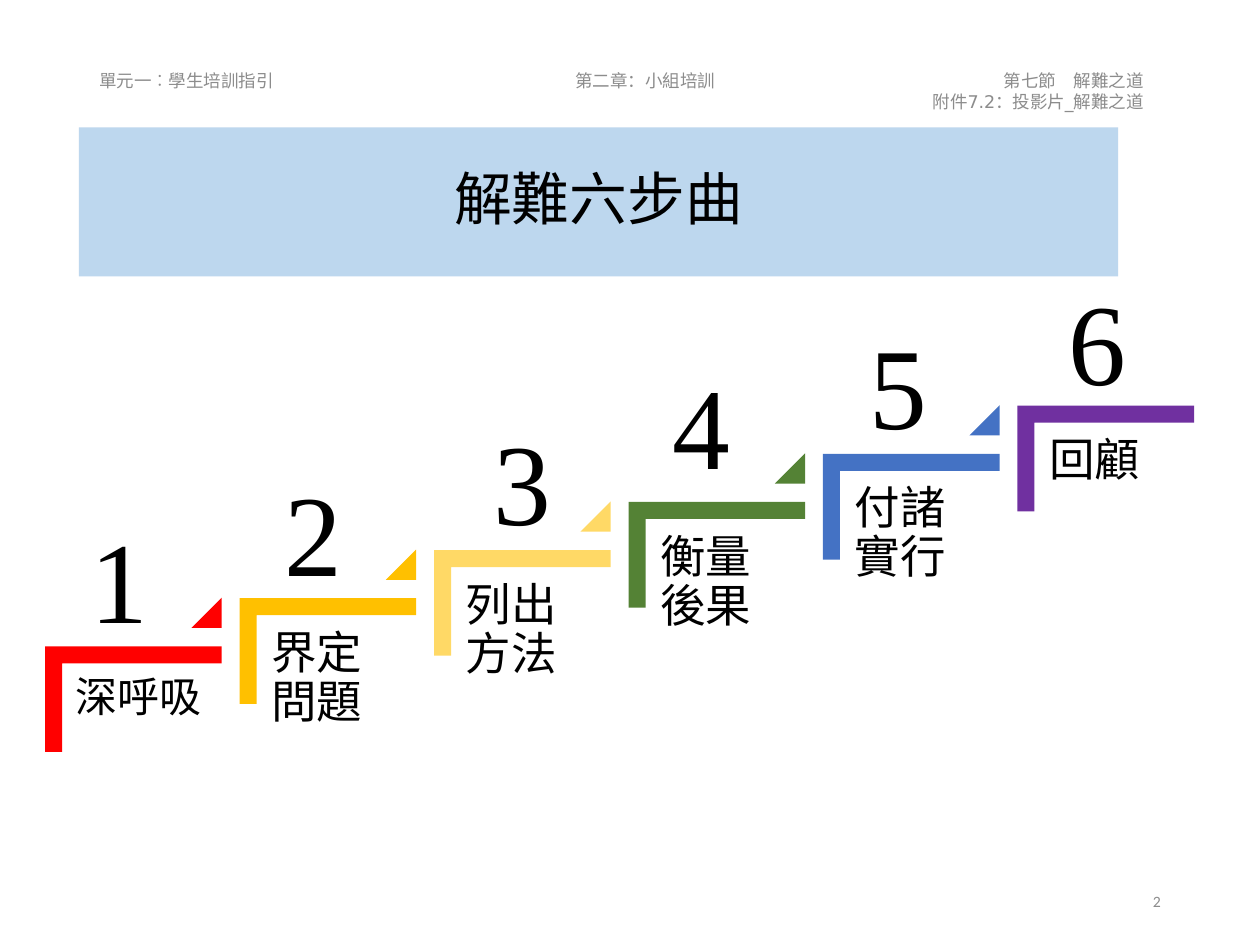
from pptx import Presentation
from pptx.dml.color import RGBColor
from pptx.enum.shapes import MSO_SHAPE
from pptx.enum.text import MSO_ANCHOR, PP_ALIGN
from pptx.util import Cm, Pt

GREY, BLACK = "8C8C8C", "000000"

# label, label size, colour, number offset from the step's corner (cm)
STEPS = [
    ("深呼吸", 24, "FF0000", (0.66, -2.92)),
    ("界定問題", 26, "FFC000", (0.66, -2.90)),
    ("列出方法", 26, "FFD966", (0.94, -2.95)),
    ("衡量後果", 26, "548235", (0.64, -3.10)),
    ("付諸實行", 26, "4472C4", (0.69, -2.95)),
    ("回顧", 26, "7030A0", (0.79, -2.87)),
]


def colour(value):
    return RGBColor.from_string(value)


def place(shape, left, top, width, height):
    shape.left, shape.top = Cm(left), Cm(top)
    shape.width, shape.height = Cm(width), Cm(height)


def write(frame, lines, size, font, ink, align=PP_ALIGN.LEFT, spacing=None):
    frame.word_wrap = True
    for index, line in enumerate(lines):
        para = frame.add_paragraph() if index else frame.paragraphs[0]
        para.alignment = align
        para.line_spacing = spacing
        span = para.add_run()
        span.text = line
        span.font.size = Pt(size)
        span.font.name = font
        span.font.color.rgb = colour(ink)


def add_text(page, box, lines, size, font, ink, align=PP_ALIGN.LEFT,
             anchor=MSO_ANCHOR.TOP, spacing=None, inset=None):
    shape = page.shapes.add_textbox(*map(Cm, box))
    frame = shape.text_frame
    frame.vertical_anchor = anchor
    if inset is not None:
        frame.margin_left = frame.margin_right = Cm(inset)
        frame.margin_top = frame.margin_bottom = Cm(inset)
    write(frame, lines, size, font, ink, align, spacing)


def add_filled(page, kind, box, fill):
    shape = page.shapes.add_shape(kind, *map(Cm, box))
    shape.shadow.inherit = False
    shape.fill.solid()
    shape.fill.fore_color.rgb = colour(fill)
    shape.line.fill.background()
    return shape


def add_header(page, left, top):
    parts = [
        (0, 0, ["單元一︰學生培訓指引"], PP_ALIGN.LEFT),
        (6.96, 0, ["第二章：小組培訓"], PP_ALIGN.CENTER),
        (12.96, 0.2, ["第七節　解難之道", "附件7.2：投影片_解難之道"], PP_ALIGN.RIGHT),
    ]
    for across, down, lines, align in parts:
        add_text(page, (left + across, top + down, 8.59, 1.02), lines, 10,
                 "DejaVu Sans", GREY, align, MSO_ANCHOR.MIDDLE)


def add_title(page, box):
    title = page.shapes.title
    place(title, *box)
    title.fill.solid()
    title.fill.fore_color.rgb = colour("BDD7EE")
    title.text_frame.vertical_anchor = MSO_ANCHOR.MIDDLE
    write(title.text_frame, ["解難六步曲"], 33, "Calibri", BLACK,
          PP_ALIGN.CENTER, 0.9)


def add_step(page, left, top, number, label, size, fill, offset, last):
    # Bracket: a corner shape turned a quarter about its centre
    width, height = 3.56, 2.13
    shift = (width - height) / 2
    bracket = add_filled(page, MSO_SHAPE.CORNER,
                         (left + shift, top - shift, height, width), fill)
    bracket.rotation = 90
    bracket.adjustments[0] = bracket.adjustments[1] = 0.161

    add_text(page, (left + 0.36, top + 0.36, 3.2, 2.82), [label], size,
             "Calibri", BLACK, spacing=0.9, inset=0.25 if size < 26 else 0.28)

    # Marker leading up to the next step
    if not last:
        marker = add_filled(page, MSO_SHAPE.ISOSCELES_TRIANGLE,
                            (left + 2.95, top - 0.98, 0.61, 0.61), fill)
        marker.adjustments[0] = 1

    across, down = offset
    add_text(page, (left + across, top + down, 2.79, 3.07), [str(number)], 66,
             "Times New Roman", BLACK)


def add_staircase(page, left, top, run, rise):
    for index, (label, size, fill, offset) in enumerate(STEPS):
        add_step(page, left + index * run, top - index * rise, index + 1,
                 label, size, fill, offset, index == len(STEPS) - 1)


def main():
    deck = Presentation()
    deck.slide_width, deck.slide_height = Cm(25.4), Cm(19.05)
    page = deck.slides.add_slide(deck.slide_layouts[5])
    add_header(page, 1.75, 1.12)
    add_title(page, (1.59, 2.57, 20.95, 3.0))
    add_staircase(page, 0.91, 13.03, 3.92, 0.97)
    # Page number
    add_text(page, (17.93, 17.65, 5.72, 1.02), ["2"], 9, "Calibri", GREY,
             PP_ALIGN.RIGHT, MSO_ANCHOR.MIDDLE)
    deck.save("out.pptx")


if __name__ == "__main__":
    main()
